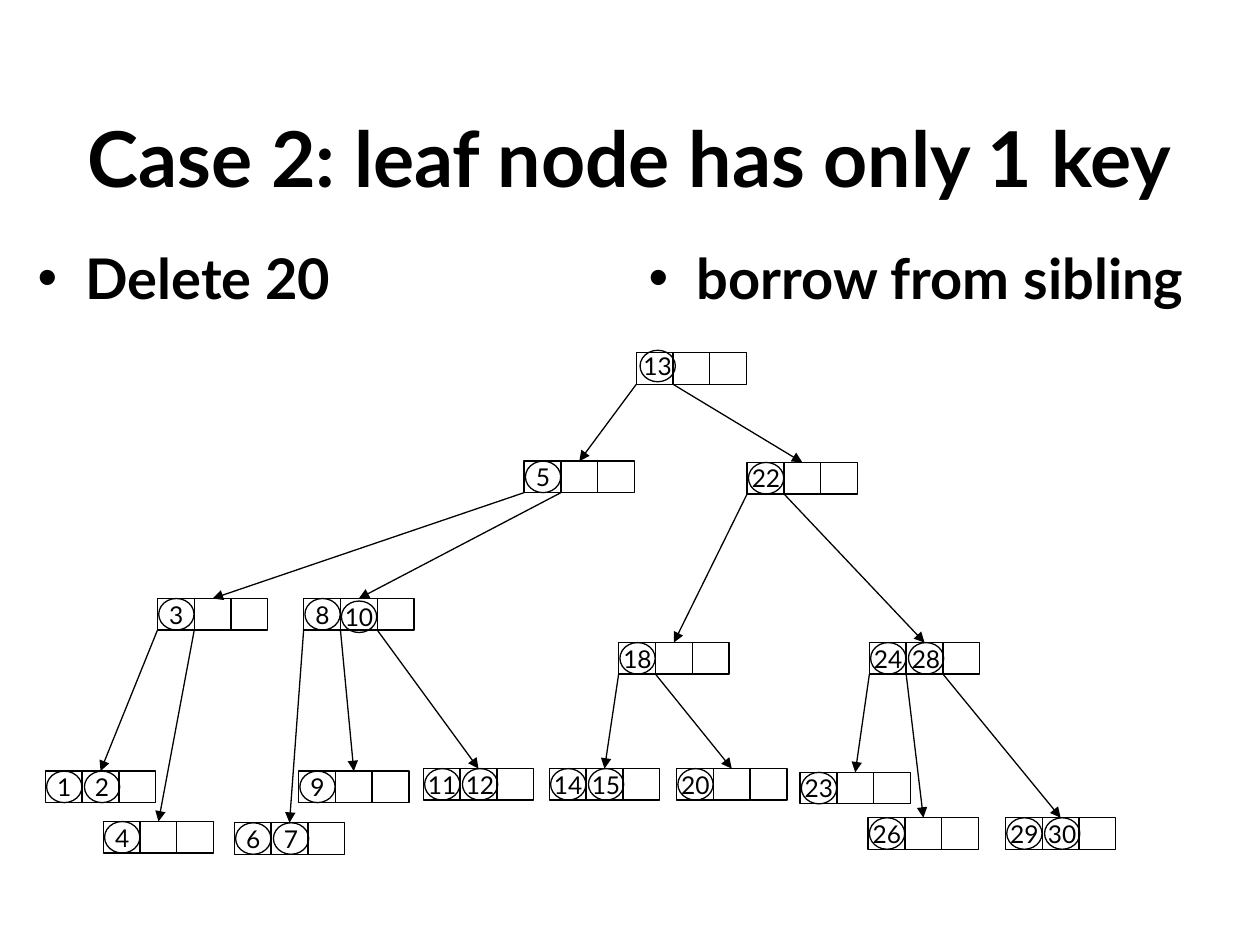
from dataclasses import dataclass, field

from lxml.etree import SubElement
from pptx import Presentation
from pptx.dml.color import RGBColor
from pptx.enum.shapes import MSO_CONNECTOR as Link, MSO_SHAPE as Shape
from pptx.enum.text import MSO_ANCHOR as Anchor, MSO_AUTO_SIZE as Fit, PP_ALIGN as Align
from pptx.oxml.ns import qn
from pptx.util import Inches, Pt


@dataclass(frozen=True)
class Theme:
    font: str = "Lato"
    ink: RGBColor = RGBColor(0, 0, 0)
    title: int = 44
    body: int = 32
    key: int = 14
    line: float = 0.75


@dataclass
class Node:
    left: float
    top: float
    keys: tuple
    kids: list = field(default_factory=list)


THEME = Theme()
CELL, HIGH, SLOTS = 0.292, 0.25, 3
RING, STEP = 0.28, 0.3
NUDGE = {13: (0.02, -0.02), 10: (-0.01, 0.02)}

TREE = Node(5.05, 2.8, (13,), [
    Node(4.16, 3.66, (5,), [
        Node(1.25, 4.75, (3,), [
            Node(0.36, 6.12, (1, 2)),
            Node(0.82, 6.52, (4,)),
        ]),
        Node(2.41, 4.75, (8, 10), [
            Node(1.86, 6.53, (6, 7)),
            Node(2.37, 6.12, (9,)),
            Node(3.36, 6.1, (11, 12)),
        ]),
    ]),
    Node(5.93, 3.67, (22,), [
        Node(4.91, 5.1, (18,), [
            Node(4.36, 6.1, (14, 15)),
            Node(5.37, 6.1, (20,)),
        ]),
        Node(6.9, 5.1, (24, 28), [
            Node(6.35, 6.13, (23,)),
            Node(6.89, 6.49, (26,)),
            Node(7.98, 6.49, (29, 30)),
        ]),
    ]),
])


def style(para, size, bold=False):
    for run in para.runs:
        font = run.font
        font.name, font.size, font.bold = THEME.font, Pt(size), bold
        font.color.rgb = THEME.ink


def add_title(slide, box, text):
    title = slide.shapes.title
    title.left, title.top, title.width, title.height = map(Inches, box)
    frame = title.text_frame
    frame.text = text
    frame.auto_size = Fit.NONE
    frame.vertical_anchor = Anchor.MIDDLE
    para = frame.paragraphs[0]
    para.alignment = Align.CENTER
    style(para, THEME.title, True)


def add_point(slide, box, text):
    frame = slide.shapes.add_textbox(*map(Inches, box)).text_frame
    frame.word_wrap = True
    frame.text = text
    para = frame.paragraphs[0]
    para.space_before = Pt(THEME.body * 0.2)
    style(para, THEME.body, True)
    props = para._p.get_or_add_pPr()
    props.set("marL", str(Inches(0.38)))
    props.set("indent", str(Inches(-0.38)))
    SubElement(props, qn("a:buFont")).set("typeface", "Arial")
    SubElement(props, qn("a:buChar")).set("char", "•")


def add_form(shapes, kind, box):
    form = shapes.add_shape(kind, *map(Inches, box))
    form.shadow.inherit = False
    form.fill.background()
    form.line.color.rgb = THEME.ink
    form.line.width = Pt(THEME.line)
    return form


def add_key(slide, box, key):
    frame = add_form(slide.shapes, Shape.OVAL, box).text_frame
    frame.word_wrap = False
    frame.vertical_anchor = Anchor.MIDDLE
    frame.text = str(key)
    para = frame.paragraphs[0]
    para.alignment = Align.CENTER
    style(para, THEME.key)


def add_arrow(slide, start, end):
    arrow = slide.shapes.add_connector(Link.STRAIGHT, *map(Inches, start + end))
    arrow.line.color.rgb = THEME.ink
    arrow.line.width = Pt(THEME.line)
    SubElement(arrow.line._get_or_add_ln(), qn("a:tailEnd")).set("type", "triangle")
    SubElement(arrow._element.spPr, qn("a:effectLst"))


def add_tree(slide, node):
    cells = slide.shapes.add_group_shape().shapes
    for slot in range(SLOTS):
        add_form(cells, Shape.RECTANGLE, (node.left + slot * CELL, node.top, CELL, HIGH))
    for slot, key in enumerate(node.keys):
        right, down = NUDGE.get(key, (0, 0))
        left = node.left + 0.01 + slot * STEP + right
        add_key(slide, (left, node.top + down, RING, HIGH), key)
    for slot, kid in enumerate(node.kids):
        start = (node.left + slot * CELL, node.top + HIGH)
        add_arrow(slide, start, (kid.left + SLOTS * CELL / 2, kid.top))
        add_tree(slide, kid)


def main():
    deck = Presentation()
    deck.slide_width, deck.slide_height = Inches(10), Inches(7.5)
    slide = deck.slides.add_slide(deck.slide_layouts[5])
    add_title(slide, (0.5, 0.62, 9, 1.25), "Case 2: leaf node has only 1 key")
    add_point(slide, (0.2, 1.88, 4.47, 1.11), "Delete 20")
    add_point(slide, (5.05, 1.88, 4.47, 0.74), "borrow from sibling")
    add_tree(slide, TREE)
    deck.save("out.pptx")


if __name__ == "__main__":
    main()
